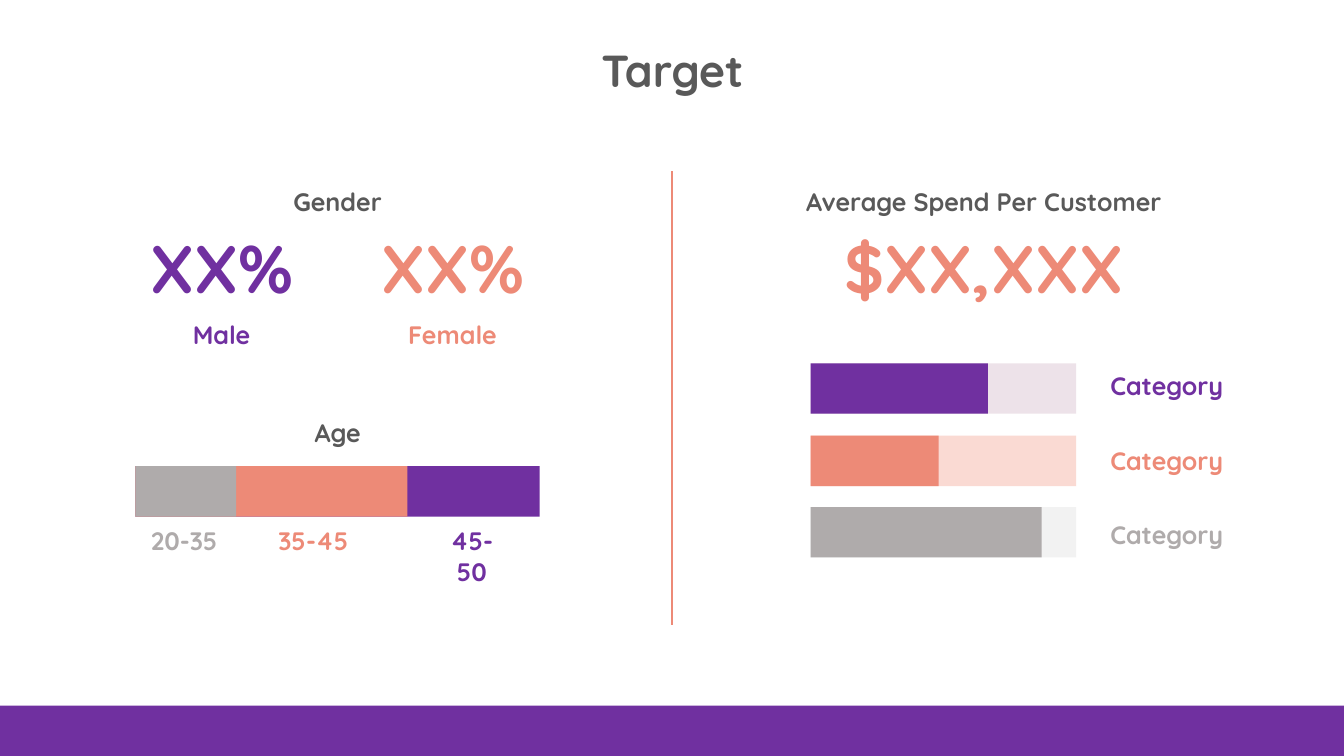
from lxml import etree
from pptx import Presentation
from pptx.dml.color import RGBColor
from pptx.enum.shapes import MSO_CONNECTOR, MSO_SHAPE
from pptx.enum.text import MSO_AUTO_SIZE, PP_ALIGN
from pptx.oxml.ns import qn
from pptx.util import Pt

PX = 9525  # EMU per pixel at 96 px to the inch
W, H = 1280, 720
PURPLE, CORAL, GRAY, DARK = "7030A0", "ED8A77", "AFABAB", "595959"
BAR_H = 48
LABEL_H = 38

prs = Presentation()
prs.slide_width, prs.slide_height = W * PX, H * PX
s = prs.slides.add_slide(prs.slide_layouts[6])


def add_text(text, x, y, w, h, color, size=18, align=PP_ALIGN.CENTER):
    tf = s.shapes.add_textbox(x * PX, y * PX, w * PX, h * PX).text_frame
    tf.word_wrap = True
    tf.auto_size = MSO_AUTO_SIZE.SHAPE_TO_FIT_TEXT
    p = tf.paragraphs[0]
    p.text = text
    p.alignment = align
    p.font.name = "Quicksand"
    p.font.size = Pt(size)
    p.font.bold = True
    p.font.color.rgb = RGBColor.from_string(color)


def add_bar(x, y, w, color):
    sp = s.shapes.add_shape(MSO_SHAPE.RECTANGLE, x * PX, y * PX, w * PX, BAR_H * PX)
    sp.shadow.inherit = False
    sp.fill.solid()
    sp.fill.fore_color.rgb = RGBColor.from_string(color)
    sp.line.fill.background()


# Title, divider and footer
add_text("Target", 300, 36, 681, 61, DARK, 32)
divider = s.shapes.add_connector(
    MSO_CONNECTOR.STRAIGHT, W // 2 * PX, 163 * PX, W // 2 * PX, 595 * PX)
divider.line.color.rgb = RGBColor.from_string(CORAL)
divider.line.width = Pt(1)
etree.SubElement(divider._element.spPr, qn("a:effectLst"))
add_bar(0, H - BAR_H, W, PURPLE)

# Gender
add_text("Gender", 261, 173, 121, LABEL_H, DARK)
for gender, x, color in (("Male", 119, PURPLE), ("Female", 339, CORAL)):
    add_text("XX%", x, 211, 184, 87, color, 48)
    add_text(gender, x, 299, 184, LABEL_H, color)

# Age: each shorter bar lies on top of the longer one
add_text("Age", 261, 393, 121, LABEL_H, DARK)
for ages, label_x, bar_w, color in (
    ("45-50", 406, 385, PURPLE),
    ("35-45", 255, 259, CORAL),
    ("20-35", 132, 96, GRAY),
):
    add_bar(129, 444, bar_w, color)
    add_text(ages, label_x, 496, 87, LABEL_H, color)

# Average spend
add_text("Average Spend Per Customer", 741, 173, 392, LABEL_H, DARK)
add_text("$XX,XXX", 787, 211, 300, 87, CORAL, 48)
for i, (bar_y, value_w, color, tint) in enumerate((
    (346, 169, PURPLE, "EDE2E9"),
    (415, 122, CORAL, "FADAD3"),
    (483, 220, GRAY, "F2F2F2"),
)):
    add_bar(772, bar_y, 253, tint)
    add_bar(772, bar_y, value_w, color)
    add_text("Category", 1048, 348 + 71 * i, 135, LABEL_H, color, align=PP_ALIGN.LEFT)

prs.save("out.pptx")
